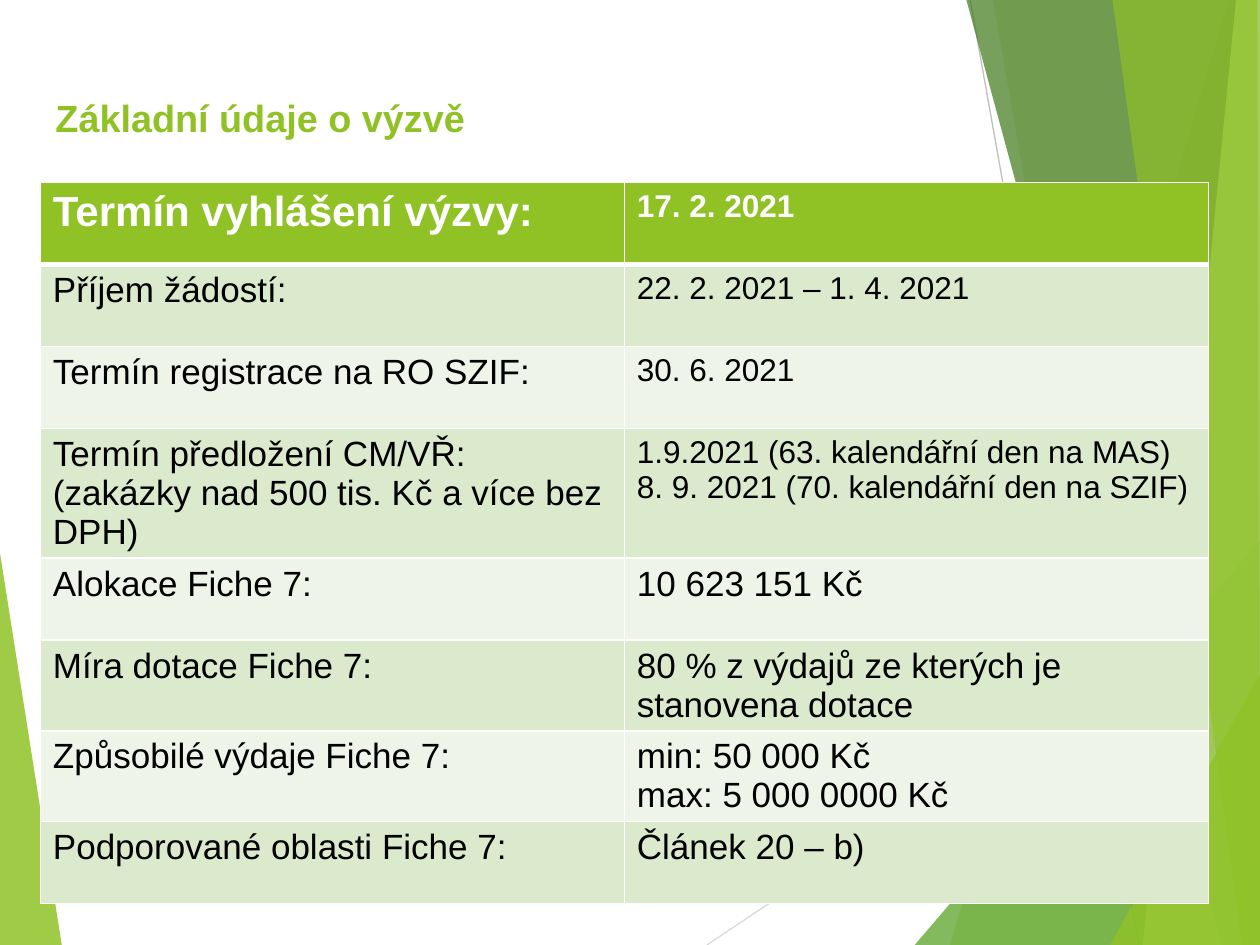
from pptx import Presentation
from pptx.dml.color import RGBColor
from pptx.enum.shapes import MSO_CONNECTOR
from pptx.enum.text import MSO_ANCHOR, PP_ALIGN
from pptx.oxml.ns import qn
from pptx.util import Inches, Pt
from lxml.etree import SubElement

COLS, ROWS = 100, 75
GREEN, WHITE, BLACK = "90C226", "FFFFFF", "000000"
BANDS = ["DBE9CD", "EEF4E8"]

SHARDS = [
    (GREEN, 85, [(0, 43.9), (4.9, 75), (0, 75)]),
    (GREEN, 30, [(97.5, 0), (75.4, 75), (100, 75), (100, 0)]),
    (GREEN, 20, [(78.8, 0), (91.9, 75), (100, 75), (100, 0)]),
    ("54A021", 72, [(72.6, 75), (100, 42.9), (100, 75)]),
    ("3F7819", 70, [(76.7, 0), (97, 75), (100, 75), (100, 0)]),
    ("C0E474", 70, [(98.1, 0), (90.7, 75), (100, 75), (100, 0)]),
    (GREEN, 65, [(88.3, 0), (98.6, 75), (100, 75), (99.8, 0)]),
    (GREEN, 80, [(88.1, 75), (100, 53.5), (100, 75)]),
]
RAYS = [
    ("D9D9D9", (56.1, 75), (100, 45.7)),
    ("BFBFBF", (77, 0), (90.4, 75)),
]
FACTS = [
    ("Termín vyhlášení výzvy:", "17. 2. 2021", 24, 18),
    ("Příjem žádostí:", "22. 2. 2021 – 1. 4. 2021", 20, 18),
    ("Termín registrace na RO SZIF:", "30. 6. 2021", 20, 18),
    ("Termín předložení CM/VŘ:\v(zakázky nad 500 tis. Kč a více bez DPH)",
     "1.9.2021 (63. kalendářní den na MAS)\n8. 9. 2021 (70. kalendářní den na SZIF)", 20, 18),
    ("Alokace Fiche 7:", "10 623 151 Kč", 20, 20),
    ("Míra dotace Fiche 7:", "80 % z výdajů ze kterých je stanovena dotace", 20, 20),
    ("Způsobilé výdaje Fiche 7:", "min: 50 000 Kč\nmax: 5 000 0000 Kč", 20, 20),
    ("Podporované oblasti Fiche 7:", "Článek 20 – b)", 20, 20),
]
HEIGHTS = [6.5, 6.5, 6.5, 8.3, 6.5, 6.5, 6.5, 6.5]


def tint(code):
    return RGBColor.from_string(code)


class Deck:
    font = "Arial"

    def __init__(self):
        self.prs = Presentation()
        self.prs.slide_width, self.prs.slide_height = Inches(10), Inches(7.5)
        self.slide = self.prs.slides.add_slide(self.prs.slide_layouts[5])
        self.shapes = self.slide.shapes

    def x(self, col):
        return round(self.prs.slide_width * col / COLS)

    def y(self, row):
        return round(self.prs.slide_height * row / ROWS)

    def style(self, frame, size, color, bold):
        look = {"name": self.font, "size": Pt(size), "bold": bold}
        for para in frame.paragraphs:
            for run in para.runs:
                for key, value in look.items():
                    setattr(run.font, key, value)
                run.font.color.rgb = tint(color)

    def shard(self, color, alpha, points):
        first, *rest = [(self.x(c), self.y(r)) for c, r in points]
        pen = self.shapes.build_freeform(*first)
        pen.add_line_segments(rest, close=True)
        shape = pen.convert_to_shape()
        shape.shadow.inherit = False
        shape.fill.solid()
        shape.fill.fore_color.rgb = tint(color)
        shape.line.fill.background()
        paint = shape._element.spPr.find(qn("a:solidFill"))[0]
        SubElement(paint, qn("a:alpha"), val=str(alpha * 1000))

    def ray(self, color, start, end):
        line = self.shapes.add_connector(
            MSO_CONNECTOR.STRAIGHT, self.x(start[0]), self.y(start[1]),
            self.x(end[0]), self.y(end[1]))
        line.line.color.rgb = tint(color)
        line.line.width = Pt(0.75)
        SubElement(line._element.spPr, qn("a:effectLst"))

    def title(self, text, left, top, width, height):
        box = self.shapes.title
        place = {"left": self.x(left), "top": self.y(top),
                 "width": self.x(width), "height": self.y(height)}
        for key, value in place.items():
            setattr(box, key, value)
        frame = box.text_frame
        frame.text = text
        frame.vertical_anchor = MSO_ANCHOR.MIDDLE
        frame.paragraphs[0].alignment = PP_ALIGN.LEFT
        self.style(frame, 21.6, GREEN, True)
        self.shapes._spTree.append(box._element)

    def edges(self, cell, top, bottom):
        props = cell._tc.get_or_add_tcPr()
        sides = {"a:lnL": 1, "a:lnR": 1, "a:lnT": top, "a:lnB": bottom}
        for spot, (tag, width) in enumerate(sides.items()):
            line = SubElement(props, qn(tag), w=str(Pt(width)))
            paint = SubElement(line, qn("a:solidFill"))
            SubElement(paint, qn("a:srgbClr"), val=WHITE)
            props.insert(spot, line)

    def table(self, facts, heights, left, top, width):
        grid = self.shapes.add_table(
            len(facts), 2, self.x(left), self.y(top),
            self.x(width), self.y(sum(heights))).table
        for row, (*texts, key_size, value_size) in enumerate(facts):
            grid.rows[row].height = self.y(heights[row])
            head = row == 0
            for col, size in enumerate((key_size, value_size)):
                cell = grid.cell(row, col)
                cell.text_frame.text = texts[col]
                cell.fill.solid()
                cell.fill.fore_color.rgb = tint(GREEN if head else BANDS[(row - 1) % 2])
                self.style(cell.text_frame, size, WHITE if head else BLACK, head)
                self.edges(cell, 3 if row == 1 else 1, 3 if head else 1)


def main():
    deck = Deck()
    deck.shard(*SHARDS[0])
    for ray in RAYS:
        deck.ray(*ray)
    for shard in SHARDS[1:]:
        deck.shard(*shard)
    deck.title("Základní údaje o výzvě", 3.4, 7, 90, 4.6)
    deck.table(FACTS, HEIGHTS, 3.2, 14.5, 92.7)
    deck.prs.save("out.pptx")


if __name__ == "__main__":
    main()
